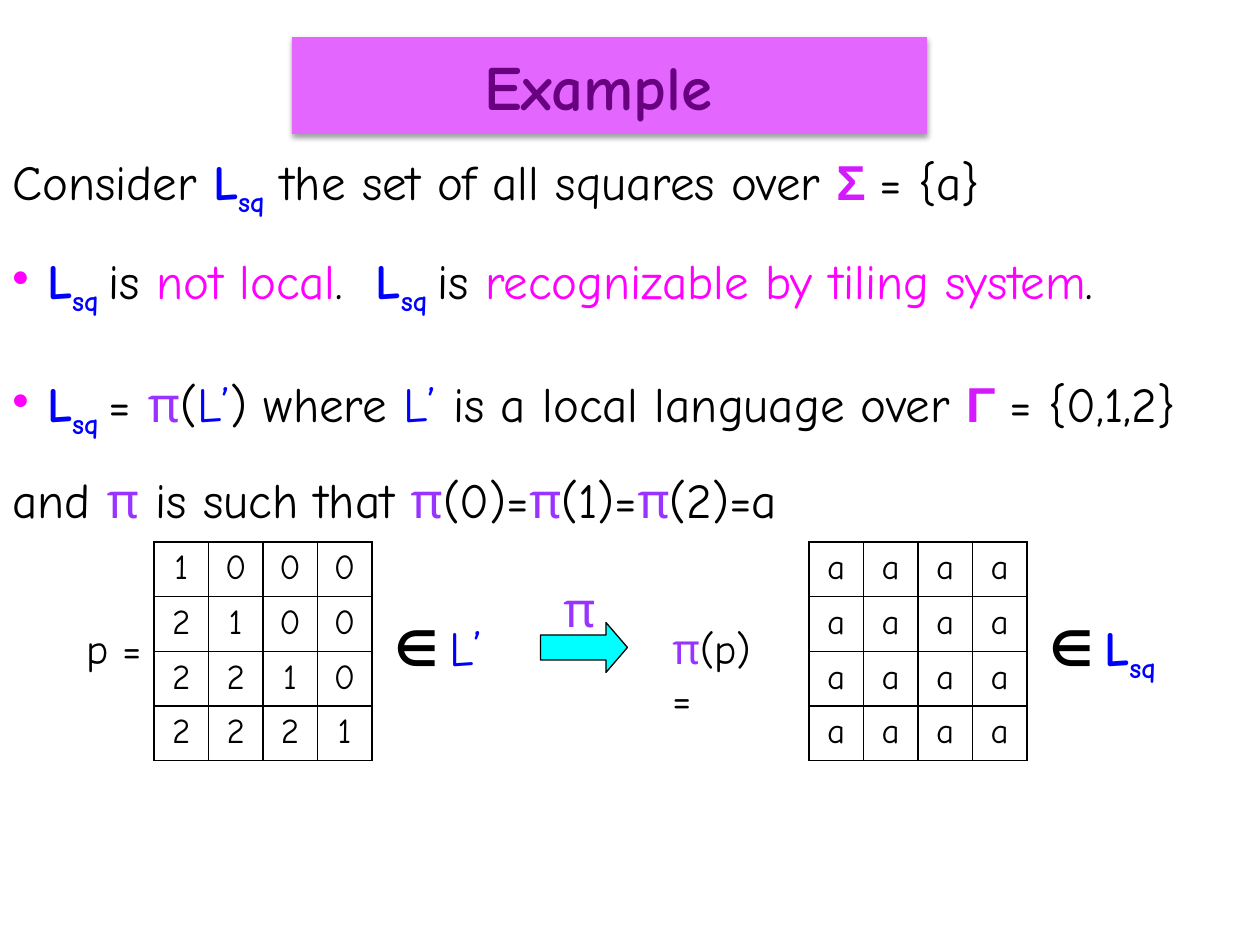
from collections import namedtuple

from lxml.etree import SubElement
from pptx import Presentation
from pptx.dml.color import RGBColor
from pptx.enum.shapes import MSO_SHAPE
from pptx.enum.text import MSO_ANCHOR, MSO_AUTO_SIZE, PP_ALIGN
from pptx.oxml import parse_xml
from pptx.oxml.ns import nsdecls, qn
from pptx.util import Emu, Pt

PX = 914400 // 126
BLACK = RGBColor(0x00, 0x00, 0x00)
BLUE = RGBColor(0x00, 0x00, 0xFF)
MAGENTA = RGBColor(0xFF, 0x00, 0xFF)
VIOLET = RGBColor(0x99, 0x33, 0xFF)
ORCHID = RGBColor(0xD5, 0x19, 0xFF)
PLUM = RGBColor(0x68, 0x00, 0x7F)
PINK = RGBColor(0xE3, 0x66, 0xFF)
CYAN = RGBColor(0x00, 0xFF, 0xFF)

Style = namedtuple("Style", "color bold font baseline", defaults=(False, "Comic Neue", 0))
PLAIN = Style(BLACK)
ACCENT = Style(MAGENTA)
LOCAL = Style(BLUE)
PROJECTION = Style(VIOLET)
LANGUAGE = Style(BLUE, True)
SUBSCRIPT = Style(BLUE, True, baseline=-25000)
ALPHABET = Style(ORCHID, True, "Arial")
MEMBER = Style(BLACK, True, "Calibri")
HEADING = Style(PLUM, True)


def px(*lengths):
    return [Emu(length * PX) for length in lengths]


def add_runs(para, pieces, size):
    for text, style in pieces:
        span = para.add_run()
        span.text = text
        span.font.size = Pt(size)
        span.font.name = style.font
        span.font.bold = style.bold
        span.font.color.rgb = style.color
        if style.baseline:
            span.font._element.set("baseline", str(style.baseline))


def add_text(page, place, pieces, size=28, wrap=True, bullet=False, spacing=None):
    box = page.shapes.add_textbox(*px(*place))
    frame = box.text_frame
    frame.word_wrap = wrap
    frame.auto_size = MSO_AUTO_SIZE.SHAPE_TO_FIT_TEXT
    para = frame.paragraphs[0]
    if bullet:
        properties = para._p.get_or_add_pPr()
        color = SubElement(properties, qn("a:buClr"))
        SubElement(color, qn("a:srgbClr"), val=str(MAGENTA))
        SubElement(properties, qn("a:buChar"), char="•")
    if spacing:
        para.line_spacing = spacing
    add_runs(para, pieces, size)


def add_title(page, place, text):
    banner = page.shapes.add_shape(MSO_SHAPE.RECTANGLE, *px(*place))
    banner.fill.solid()
    banner.fill.fore_color.rgb = PINK
    banner.line.fill.background()
    banner._element.spPr.append(parse_xml(
        f'<a:effectLst {nsdecls("a")}>'
        '<a:outerShdw blurRad="40000" dist="20000" dir="5400000" rotWithShape="0">'
        '<a:srgbClr val="000000"><a:alpha val="38000"/></a:srgbClr>'
        '</a:outerShdw></a:effectLst>'))
    frame = banner.text_frame
    frame.margin_left = frame.margin_right = 0
    frame.vertical_anchor = MSO_ANCHOR.MIDDLE
    para = frame.paragraphs[0]
    para.alignment = PP_ALIGN.CENTER
    add_runs(para, [(text, HEADING)], 36)


def add_arrow(page, place):
    arrow = page.shapes.add_shape(MSO_SHAPE.DOWN_ARROW, *px(*place))
    arrow.rotation = 270
    arrow.adjustments[0] = 0.5
    arrow.adjustments[1] = 0.43
    arrow.shadow.inherit = False
    arrow.fill.solid()
    arrow.fill.fore_color.rgb = CYAN
    arrow.line.color.rgb = BLACK
    arrow.line.width = Pt(0.75)


def add_borders(cell):
    properties = cell._tc.get_or_add_tcPr()
    for index, side in enumerate("LRTB"):
        properties.insert(index, parse_xml(
            f'<a:ln{side} {nsdecls("a")} w="{Pt(1)}"><a:solidFill>'
            f'<a:srgbClr val="{BLACK}"/></a:solidFill></a:ln{side}>'))


def add_grid(page, left, top, side, lines):
    count = len(lines)
    table = page.shapes.add_table(count, count, *px(left, top, side, side)).table
    table.first_row = table.horz_banding = False
    for track in [*table.rows]:
        track.height = side * PX // count
    for track in [*table.columns]:
        track.width = side * PX // count
    for row, line in enumerate(lines):
        for column, symbol in enumerate(line):
            cell = table.cell(row, column)
            cell.fill.background()
            add_borders(cell)
            para = cell.text_frame.paragraphs[0]
            para.alignment = PP_ALIGN.CENTER
            add_runs(para, [(symbol, PLAIN)], 20)


def main():
    deck = Presentation()
    deck.slide_width, deck.slide_height = px(1260, 945)
    page = deck.slides.add_slide(deck.slide_layouts[6])

    add_title(page, (292, 37, 635, 97), "Example ")
    add_text(page, (0, 145, 1260, 72), [
        ("Consider ", PLAIN), ("L", LANGUAGE), ("sq", SUBSCRIPT),
        (" the set of all squares over ", PLAIN), ("Σ ", ALPHABET), ("= {a}", PLAIN)])
    add_text(page, (0, 244, 1260, 72), [
        (" L", LANGUAGE), ("sq ", SUBSCRIPT), ("is ", PLAIN), ("not local", ACCENT),
        (".  ", PLAIN), ("L", LANGUAGE), ("sq ", SUBSCRIPT), ("is ", PLAIN),
        ("recognizable by tiling system", ACCENT), (".", PLAIN)], bullet=True)
    add_text(page, (0, 334, 1260, 190), [
        (" L", LANGUAGE), ("sq ", SUBSCRIPT), ("= ", PLAIN), ("π", PROJECTION),
        ("(", PLAIN), ("L’", LOCAL), (") where ", PLAIN), ("L’ ", LOCAL),
        ("is a local language over ", PLAIN), ("Γ ", ALPHABET),
        ("= {0,1,2} and ", PLAIN), ("π ", PROJECTION), ("is such that ", PLAIN),
        ("π", PROJECTION), ("(0)=", PLAIN), ("π", PROJECTION), ("(1)=", PLAIN),
        ("π", PROJECTION), ("(2)=a", PLAIN)], bullet=True, spacing=1.5)

    add_text(page, (74, 616, 82, 63), [("p =", PLAIN)], size=24, wrap=False)
    add_grid(page, 154, 542, 218, ["1000", "2100", "2210", "2221"])
    add_text(page, (382, 611, 118, 72), [("∈ ", MEMBER), ("L’", LOCAL)])
    add_text(page, (551, 572, 53, 72), [("π", PROJECTION)], wrap=False)
    add_arrow(page, (559, 604, 50, 87))
    add_text(page, (660, 616, 136, 63), [("π", PROJECTION), ("(p) =", PLAIN)], size=24)
    add_grid(page, 809, 542, 218, ["aaaa"] * 4)
    add_text(page, (1037, 611, 149, 72), [
        ("∈ ", MEMBER), ("L", LANGUAGE), ("sq", SUBSCRIPT)])

    deck.save("out.pptx")


if __name__ == "__main__":
    main()
